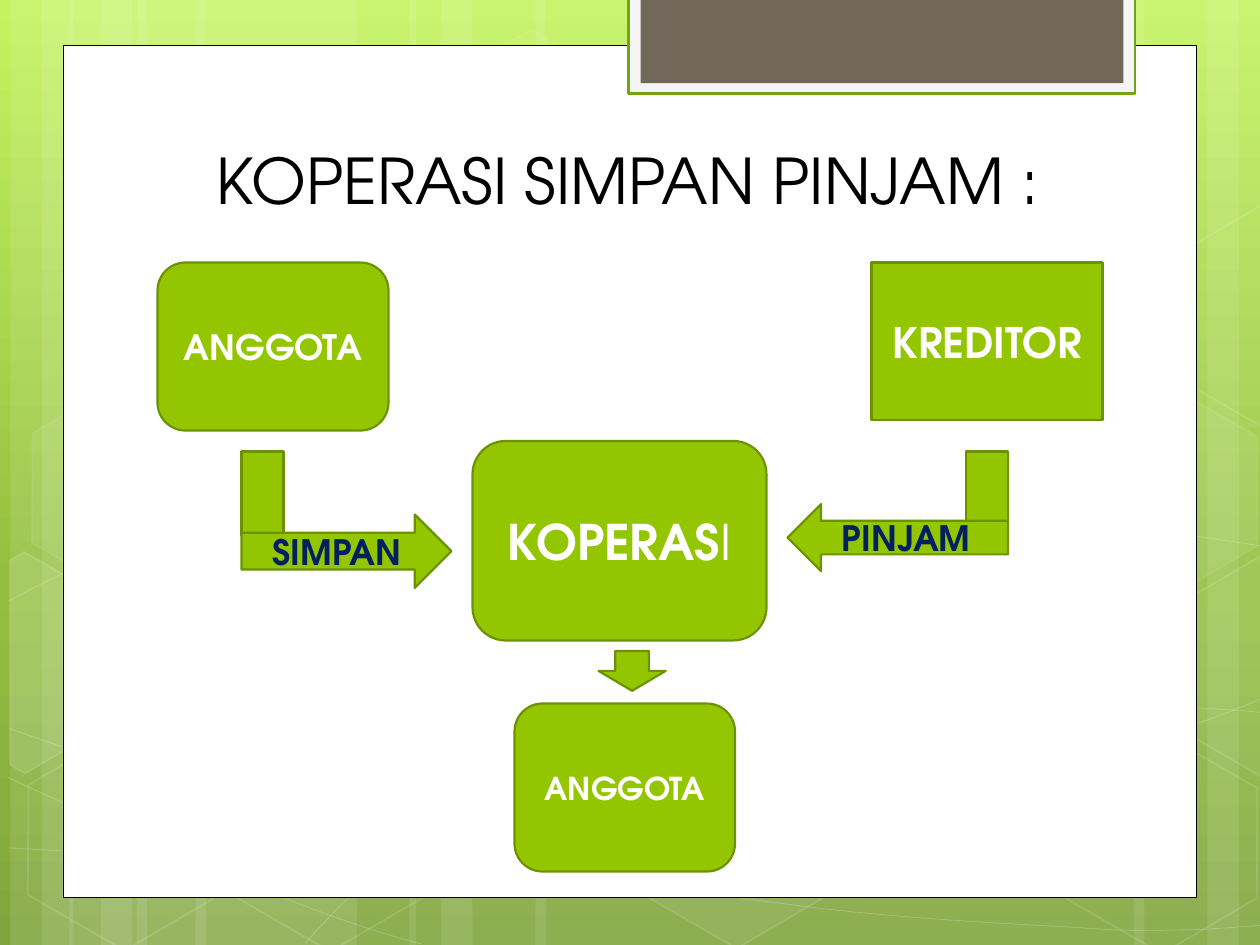
from copy import deepcopy

from pptx import Presentation
from pptx.dml.color import RGBColor
from pptx.enum.shapes import MSO_SHAPE as SHAPE
from pptx.enum.text import MSO_ANCHOR as ANCHOR, PP_ALIGN as ALIGN
from pptx.oxml.ns import qn
from pptx.oxml.xmlchemy import OxmlElement
from pptx.util import Inches, Pt

WHITE = RGBColor(0xFF, 0xFF, 0xFF)
BLACK = RGBColor(0, 0, 0)
NAVY = RGBColor(0x00, 0x20, 0x60)
LIME = RGBColor(0x94, 0xC6, 0x00)
OLIVE = RGBColor(0x6D, 0x92, 0x00)
TAB_EDGE = RGBColor(0x74, 0xA5, 0x10)
TAB_PALE = RGBColor(0xF5, 0xF5, 0xF5)
TAB_BROWN = RGBColor(0x71, 0x68, 0x5A)
GRADIENT = [
    (0, RGBColor(0xC3, 0xF3, 0x5F)),
    (0.62, RGBColor(0x93, 0xBF, 0x3F)),
    (1, RGBColor(0x81, 0xA5, 0x3E)),
]
FONT = "TeX Gyre Adventor"
COLS, ROWS = 120, 90
CELL = Inches(10) / COLS

CURVES = [
    [(0.07, 6.73), (0.61, 6.76), (1.15, 6.79), (1.9, 6.78), (2.65, 6.77), (3.58, 6.75),
     (4.58, 6.65), (5.58, 6.55), (7, 6.36), (7.92, 6.17), (8.83, 5.98), (9.77, 5.68),
     (10.07, 5.51)],
    [(0.07, 4.77), (0.36, 4.61), (0.65, 4.46), (1.21, 4.31), (1.78, 4.16), (2.59, 3.94),
     (3.47, 3.87), (4.36, 3.8), (5.44, 3.79), (6.54, 3.87), (7.64, 3.95), (9.47, 4.26),
     (10.07, 4.34)],
    [(0.06, 6.17), (1.27, 6.72), (2.47, 7.27), (3.34, 7.49)],
    [(0.07, 5.78), (0.38, 5.89), (0.7, 6), (1.28, 6.16), (1.86, 6.31), (2.73, 6.56),
     (3.57, 6.73), (4.4, 6.9), (5.45, 7.08), (6.28, 7.18), (7.11, 7.29), (8, 7.33),
     (8.53, 7.36), (9.05, 7.4), (9.19, 7.38), (9.45, 7.38), (9.71, 7.37), (9.89, 7.35),
     (10.07, 7.34)],
    [(2.42, 7.49), (2.6, 7.29), (2.78, 7.09), (3.02, 6.91), (3.26, 6.73), (3.6, 6.53),
     (3.88, 6.39), (4.16, 6.25), (4.33, 6.19), (4.7, 6.09), (5.06, 5.99), (5.73, 5.85),
     (6.08, 5.78), (6.44, 5.71), (6.49, 5.71), (6.8, 5.69), (7.11, 5.66), (7.6, 5.63),
     (7.94, 5.62), (8.29, 5.61), (9.2, 5.61), (9.53, 5.62), (9.71, 5.63), (9.88, 5.64),
     (10.06, 5.66)],
]
HEXAGONS = [
    (40.1, 4.3, 4, 8), (59.6, 70.7, 6, 12), (1.3, 70.9, 0, 12), (1.7, 37.4, 7, 8),
    (20.9, 71, 0, 12), (90.4, 54.4, 10, 12), (100.1, 71.2, 0, 12), (100.1, 37.7, 7, 8),
]
CUT_LEFT = [(0.08, 4.45), (0.19, 4.38), (0.96, 4.82), (0.95, 5.7), (0.2, 6.14), (0.08, 6.07)]
CUT_RIGHT = [(9.26, 4.85), (10.01, 4.41), (10.09, 4.46), (10.09, 6.13), (10.02, 6.17),
             (9.26, 5.73)]
CUT_TOP = [(x, y - 2.78) for x, y in CUT_RIGHT]


def place(box, x, y, w, h):
    return [round(v * CELL) for v in (box[0] + x, box[1] + y, w, h)]


def set_alpha(color_parent, percent):
    alpha = OxmlElement("a:alpha")
    alpha.set("val", str(percent * 1000))
    color_parent.find(".//" + qn("a:srgbClr")).append(alpha)


def paint(sp, fill=None, line=None, width=1.25, fill_alpha=100, line_alpha=100):
    sp.shadow.inherit = False
    for target, color, alpha in ((sp.fill, fill, fill_alpha), (sp.line.fill, line, line_alpha)):
        if color is None or alpha == 0:
            target.background()
        else:
            target.solid()
            target.fore_color.rgb = color
    spPr = sp._element.spPr
    if fill is not None and 0 < fill_alpha < 100:
        set_alpha(spPr.find(qn("a:solidFill")), fill_alpha)
    if line is not None:
        sp.line.width = Pt(width)
        if line_alpha < 100:
            set_alpha(spPr.find(qn("a:ln")), line_alpha)
    return sp


def write(sp, text, size, color, bold=True):
    p = sp.text_frame.paragraphs[0]
    p.text = text
    p.alignment = ALIGN.CENTER
    for r in p.runs:
        r.font.name, r.font.size, r.font.bold = FONT, Pt(size), bold
        r.font.color.rgb = color
    return p


def outline(slide, points, closed):
    start, *rest = [(Inches(x), Inches(y)) for x, y in points]
    builder = slide.shapes.build_freeform(*start)
    builder.add_line_segments(rest, close=closed)
    return builder.convert_to_shape()


def curve(slide, points):
    sp = outline(slide, points, False)
    segments = list(sp._element.iter(qn("a:lnTo")))
    for i in range(0, len(segments), 3):
        bend = OxmlElement("a:cubicBezTo")
        segments[i].addprevious(bend)
        for segment in segments[i:i + 3]:
            bend.append(segment[0])
            segment.getparent().remove(segment)
    return sp


def draw_gradient(slide):
    fill = slide.background.fill
    fill.gradient()
    fill.gradient_angle = 270
    stops = slide._element.find(".//" + qn("a:gsLst"))
    stops.append(deepcopy(stops[-1]))
    for stop, (position, color) in zip(fill.gradient_stops, GRADIENT):
        stop.position = position
        stop.color.rgb = color


def draw_backdrop(slide, box):
    left = [(0, 6), (3, 10), (12, 21)]
    stripes = [(start + x, w) for start in (1, 6.6) for x, w in left]
    stripes += [(COLS + 1 - x - w, w) for x, w in left]
    stripes += [(39, 6), (42, 10), (51, 37)]
    for x, w in stripes:
        paint(slide.shapes.add_shape(SHAPE.RECTANGLE, *place(box, x, 0, w, box[3])),
              WHITE, fill_alpha=10)
    for points in CURVES:
        paint(curve(slide, points), None, WHITE, 0.5, line_alpha=20)
    for x, y, fill_alpha, line_alpha in HEXAGONS:
        sp = slide.shapes.add_shape(SHAPE.HEXAGON, *place(box, x, y, 21, 18.2))
        sp.adjustments[0] = 0.285
        sp.rotation = 30
        paint(sp, WHITE, WHITE, 1, fill_alpha, line_alpha)
    for points, fill_alpha in ((CUT_LEFT, 10), (CUT_RIGHT, 4), (CUT_TOP, 0)):
        paint(outline(slide, points, True), WHITE, WHITE, 1, fill_alpha, 12)


def draw_panel(slide, box):
    for x, y, w, h, fill, line, width in (
        (0, 0, box[2], box[3], WHITE, BLACK, 0.5),
        (53.85, -4.5, 48.25, 9.1, TAB_PALE, TAB_EDGE, 1.25),
        (55, -4.5, 46, 8.1, TAB_BROWN, None, 0),
    ):
        paint(slide.shapes.add_shape(SHAPE.RECTANGLE, *place(box, x, y, w, h)),
              fill, line, width)


def draw_title(slide, box):
    title = slide.shapes.title
    slide.shapes._spTree.append(title._element)
    title.left, title.top, title.width, title.height = place(box, 0, 0, box[2], box[3])
    tf = title.text_frame
    tf.vertical_anchor = ANCHOR.TOP
    tf.margin_top = Inches(0.01)
    tf.word_wrap = True
    write(title, "KOPERASI SIMPAN PINJAM :", 36, BLACK, False)


def draw_flow(slide, box):
    def part(kind, x, y, w, h, text="", size=20, color=WHITE):
        sp = slide.shapes.add_shape(kind, *place(box, x, y, w, h))
        paint(sp, LIME, OLIVE)
        return write(sp, text, size, color) if text else None

    part(SHAPE.ROUNDED_RECTANGLE, 0, 0, 22, 16, "ANGGOTA")
    p = part(SHAPE.ROUNDED_RECTANGLE, 30, 17, 28, 19, "KOPERAS", 28)
    r = p.add_run()
    r.text = "I"
    r.font.name, r.font.size, r.font.bold = FONT, Pt(28), False
    r.font.color.rgb = WHITE
    part(SHAPE.ROUNDED_RECTANGLE, 34, 42, 21, 16, "ANGGOTA", 18)
    part(SHAPE.RECTANGLE, 8, 18, 4, 8)
    part(SHAPE.RIGHT_ARROW, 8, 24, 20, 7, "SIMPAN", 20, NAVY)
    part(SHAPE.RECTANGLE, 77, 18, 4, 7)
    part(SHAPE.LEFT_ARROW, 60, 23, 21, 6.4, "PINJAM", 20, NAVY)
    part(SHAPE.DOWN_ARROW, 42, 37, 6.4, 3.8)
    part(SHAPE.RECTANGLE, 68, 0, 22, 15, "KREDITOR", 24)


def main():
    prs = Presentation()
    prs.slide_width, prs.slide_height = Inches(10), Inches(7.5)
    slide = prs.slides.add_slide(prs.slide_layouts[5])
    draw_gradient(slide)
    draw_backdrop(slide, (0, 0, COLS, ROWS))
    draw_panel(slide, (6, 4.32, 108, 81.2))
    draw_title(slide, (13.7, 13.4, 92.2, 15))
    draw_flow(slide, (15, 25, 90, 58))
    prs.save("out.pptx")


if __name__ == "__main__":
    main()
